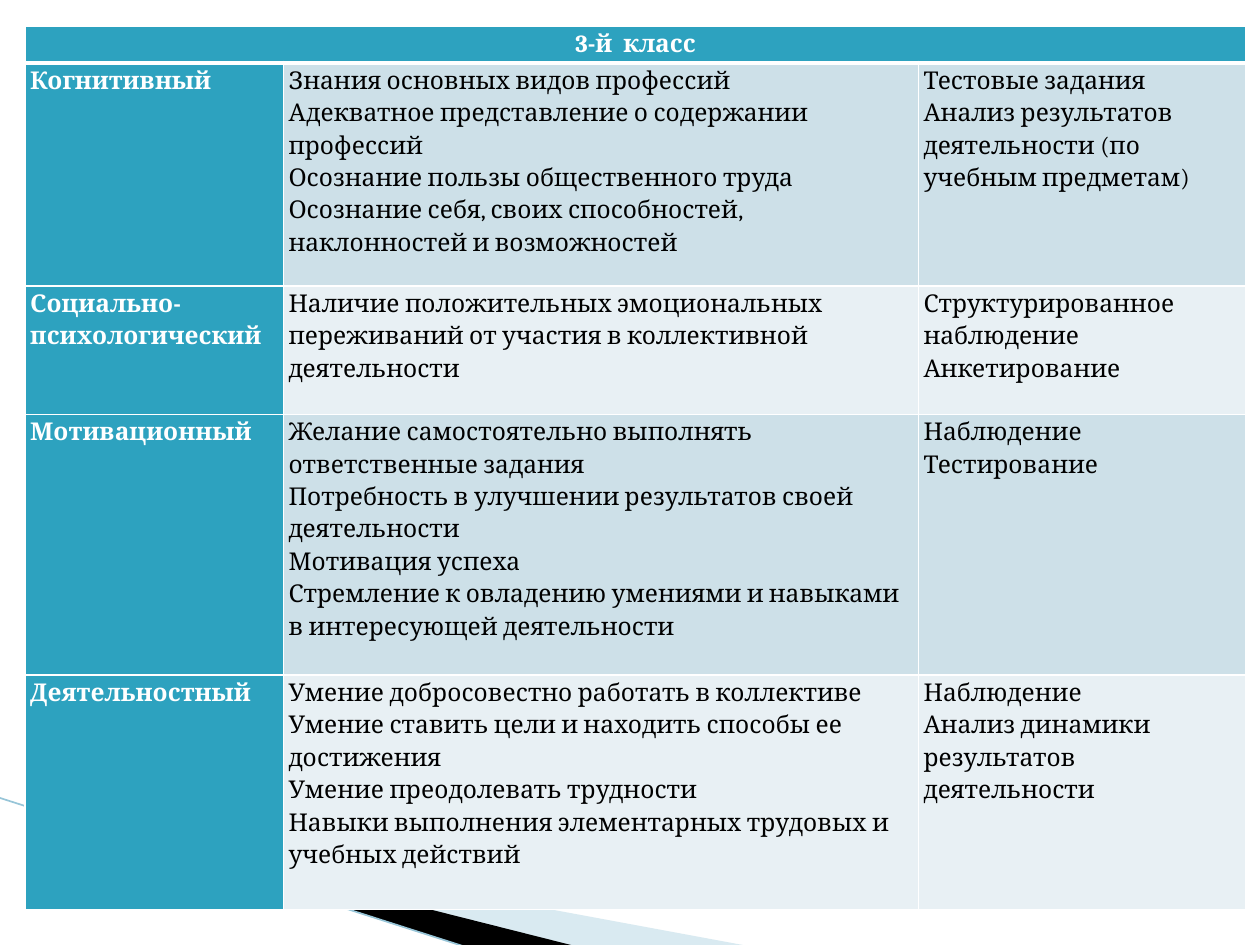
from typing import NamedTuple

from lxml import etree
from pptx import Presentation
from pptx import util as u
from pptx.dml.color import RGBColor
from pptx.enum import text
from pptx.oxml import ns

SCALE = 9144  # EMU in one px, 100 px to the inch
FONT = "Cambria"
WHITE, BLACK, TEAL = "FFFFFF", "000000", "2DA2BF"
BANDS = ("CDE0E8", "E8F0F4")
COLS = (205, 504, 260)
ROWS = (29, 177, 102, 207, 186)
TITLE = "3-й  класс"


class Shard(NamedTuple):
    points: tuple[tuple[int, int], ...]
    color: str
    alpha: int


class Entry(NamedTuple):
    name: str
    goals: tuple[str, ...]
    tools: tuple[str, ...]


SHARDS = (
    Shard(((55, 651), (595, 751), (456, 751), (55, 650)), "A0CBDC", 40),
    Shard(((53, 649), (457, 751), (372, 752), (54, 650)), BLACK, 100),
)

ENTRIES = (
    Entry(
        "Когнитивный",
        (
            "Знания основных видов профессий",
            "Адекватное представление о содержании профессий",
            "Осознание пользы общественного труда",
            "Осознание себя, своих способностей, наклонностей и возможностей",
        ),
        (
            "Тестовые задания",
            "Анализ результатов деятельности (по учебным предметам)",
        ),
    ),
    Entry(
        "Социально-психологический",
        (
            "Наличие положительных эмоциональных переживаний "
            "от участия в коллективной деятельности",
        ),
        ("Структурированное наблюдение", "Анкетирование"),
    ),
    Entry(
        "Мотивационный",
        (
            "Желание самостоятельно выполнять ответственные задания",
            "Потребность в улучшении результатов своей деятельности",
            "Мотивация успеха",
            "Стремление к овладению умениями и навыками "
            "в интересующей деятельности",
        ),
        ("Наблюдение", "Тестирование"),
    ),
    Entry(
        "Деятельностный",
        (
            "Умение добросовестно работать в коллективе",
            "Умение ставить цели и находить способы ее достижения",
            "Умение преодолевать трудности",
            "Навыки выполнения элементарных трудовых и учебных действий",
        ),
        ("Наблюдение", "Анализ динамики результатов деятельности"),
    ),
)


def px(n: int) -> u.Emu:
    return u.Emu(n * SCALE)


def rgb(color: str) -> RGBColor:
    return RGBColor.from_string(color)


def add(parent, tag: str, **attrs: str):
    """Append a DrawingML element to parent."""
    return etree.SubElement(parent, ns.qn(tag), **attrs)


def draw_shard(slide, shard: Shard) -> None:
    start, *rest = shard.points
    pen = slide.shapes.build_freeform(*start, scale=SCALE)
    pen.add_line_segments(rest, close=True)
    shape = pen.convert_to_shape()
    shape.shadow.inherit = False
    shape.line.fill.background()
    shape.fill.solid()
    shape.fill.fore_color.rgb = rgb(shard.color)
    if shard.alpha < 100:
        tint = shape.fill._xPr.find(".//" + ns.qn("a:srgbClr"))
        add(tint, "a:alpha", val=str(shard.alpha * 1000))


def draw_edge(slide) -> None:
    line = slide.shapes.add_connector(1, px(-1), px(633), px(371), px(752))
    line.line.color.rgb = rgb("97C5D8")
    line.line.width = u.Pt(0.95)
    add(line._element.spPr, "a:effectLst")


def set_rules(cell, top: int = 1, bottom: int = 1) -> None:
    """Give a cell white borders, with widths in points."""
    props = cell._tc.get_or_add_tcPr()
    for side, width in (("L", 1), ("R", 1), ("T", top), ("B", bottom)):
        rule = add(props, f"a:ln{side}", w=str(u.Pt(width)))
        add(add(rule, "a:solidFill"), "a:srgbClr", val=WHITE)


def fill_cell(cell, lines: tuple[str, ...], back: str, head: bool) -> None:
    cell.fill.solid()
    cell.fill.fore_color.rgb = rgb(back)
    cell.margin_left = cell.margin_right = px(4)
    cell.margin_top = cell.margin_bottom = 0
    cell.text_frame.text = "\n".join(lines)
    for para in cell.text_frame.paragraphs:
        para.line_spacing = 1.15
        for run in para.runs:
            run.font.name = FONT
            run.font.size = u.Pt(14)
            run.font.bold = head
            run.font.color.rgb = rgb(WHITE if head else BLACK)


def draw_table(slide) -> None:
    frame = slide.shapes.add_table(
        len(ROWS), len(COLS), px(20), px(21), px(sum(COLS)), px(sum(ROWS))
    )
    table = frame.table
    for col, width in zip(table.columns, COLS):
        col.width = px(width)
    for i, (row, height) in enumerate(zip(table.rows, ROWS)):
        row.height = px(height)
        for cell in row.cells:
            set_rules(cell, 3 if i == 1 else 1, 3 if i == 0 else 1)

    title = table.cell(0, 0)
    title.merge(table.cell(0, len(COLS) - 1))
    fill_cell(title, (TITLE,), TEAL, True)
    title.text_frame.paragraphs[0].alignment = text.PP_ALIGN.CENTER

    for i, entry in enumerate(ENTRIES):
        band = BANDS[i % 2]
        fill_cell(table.cell(i + 1, 0), (entry.name,), TEAL, True)
        fill_cell(table.cell(i + 1, 1), entry.goals, band, False)
        fill_cell(table.cell(i + 1, 2), entry.tools, band, False)


def main() -> None:
    deck = Presentation()
    deck.slide_width, deck.slide_height = px(1000), px(750)
    slide = deck.slides.add_slide(deck.slide_layouts[6])
    for shard in SHARDS:
        draw_shard(slide, shard)
    draw_edge(slide)
    draw_table(slide)
    deck.save("out.pptx")


if __name__ == "__main__":
    main()
